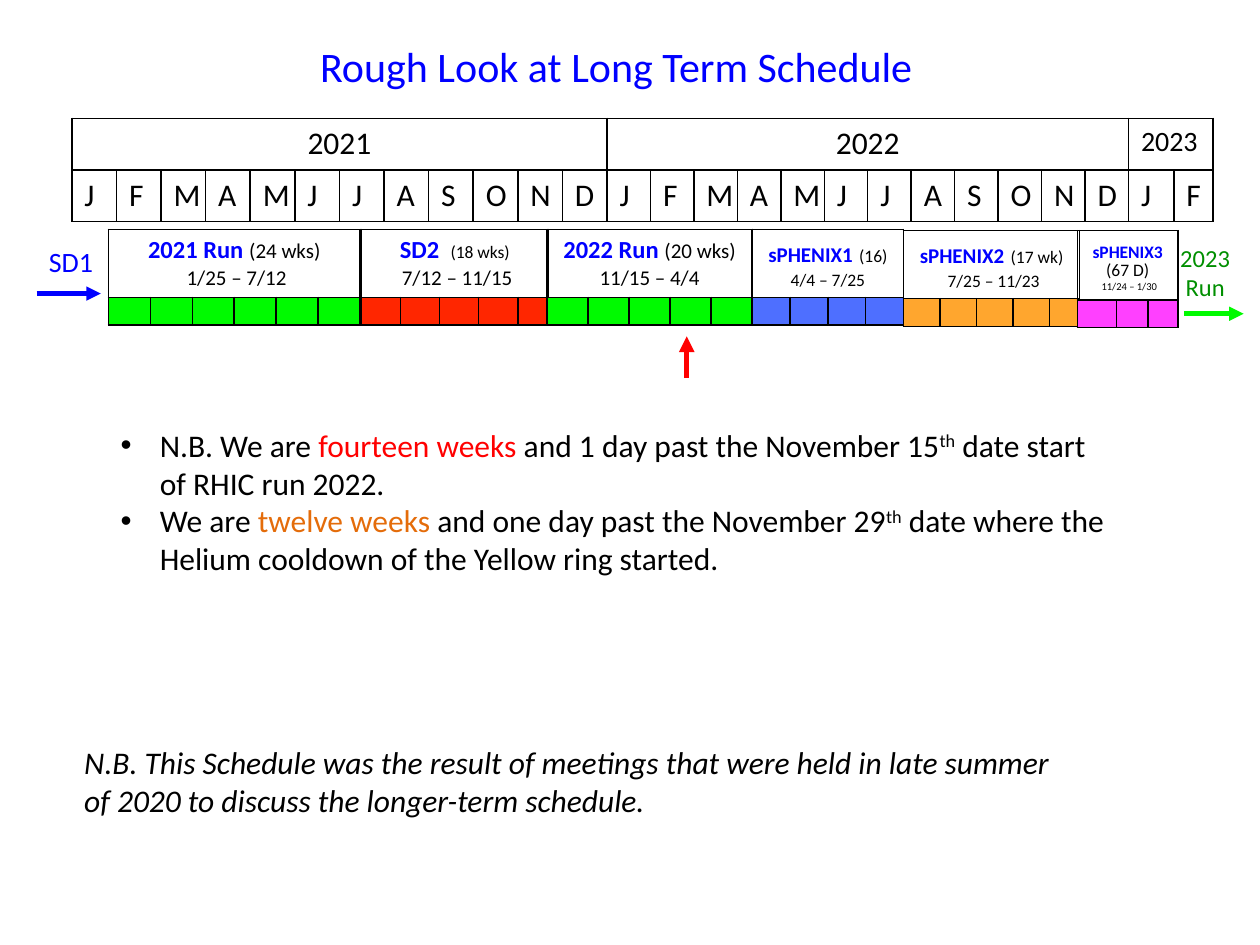
from dataclasses import dataclass

from lxml import etree
from pptx import Presentation
from pptx.dml.color import RGBColor
from pptx.enum.shapes import MSO_CONNECTOR
from pptx.enum.text import MSO_ANCHOR, MSO_AUTO_SIZE, PP_ALIGN
from pptx.oxml.ns import qn
from pptx.util import Inches, Pt

STRAIGHT = MSO_CONNECTOR.STRAIGHT
TOP = MSO_ANCHOR.TOP
NO_AUTOFIT = MSO_AUTO_SIZE.NONE
LEFT, CENTER = PP_ALIGN.LEFT, PP_ALIGN.CENTER
TITLE_ONLY = 5


@dataclass(frozen=True)
class Theme:
    font: str = "Calibri"
    black: str = "000000"
    blue: str = "0000FF"
    red: str = "FF0000"
    orange: str = "E46C0A"
    dark_green: str = "008F00"
    run_green: str = "00FA00"
    shutdown_red: str = "FF2600"
    phase1_blue: str = "0432FF"
    phase2_orange: str = "FF9300"
    phase3_pink: str = "FF40FF"
    title: int = 24
    body: int = 18
    label: int = 16
    heading: int = 14
    dates: int = 12
    small: int = 10
    mini: int = 8
    tiny: int = 6


T = Theme()


@dataclass(frozen=True)
class Span:
    text: str
    size: int = T.body
    color: str = T.black
    bold: bool = False
    italic: bool = False
    raised: bool = False


@dataclass(frozen=True)
class Period:
    left: float
    top: float
    columns: list[float]
    color: str
    lines: list[list[Span]]
    opacity: int = 100
    spacing: float = 1.0


@dataclass(frozen=True)
class Arrow:
    start: tuple[float, float]
    end: tuple[float, float]
    color: str
    weight: float = 2.75


def heading(text: str, size: int) -> Span:
    return Span(text, size, T.blue, bold=True)


def write(frame, lines: list[list[Span]], align=LEFT, spacing: float = 1.0) -> None:
    for index, spans in enumerate(lines):
        paragraph = frame.paragraphs[0] if index == 0 else frame.add_paragraph()
        paragraph.alignment = align
        paragraph.line_spacing = spacing
        for span in spans:
            run = paragraph.add_run()
            run.text = span.text
            run.font.name = T.font
            run.font.size = Pt(span.size)
            run.font.bold = span.bold
            run.font.italic = span.italic
            run.font.color.rgb = RGBColor.from_string(span.color)
            if span.raised:
                run.font._element.set("baseline", "30000")


def add_text(slide, box: tuple[float, ...], lines: list[list[Span]], align=LEFT, wrap: bool = True):
    frame = slide.shapes.add_textbox(*map(Inches, box)).text_frame
    frame.word_wrap = wrap
    write(frame, lines, align)
    return frame


def add_bullets(frame) -> None:
    for paragraph in frame.paragraphs:
        properties = paragraph._p.get_or_add_pPr()
        properties.set("marL", str(Inches(0.31)))
        properties.set("indent", str(-Inches(0.31)))
        etree.SubElement(properties, qn("a:buFont"), typeface="Arial")
        etree.SubElement(properties, qn("a:buChar"), char="•")


def outline(cell) -> None:
    properties = cell._tc.get_or_add_tcPr()
    for position, side in enumerate(("a:lnL", "a:lnR", "a:lnT", "a:lnB")):
        border = etree.Element(qn(side), w=str(Pt(1)))
        fill = etree.SubElement(border, qn("a:solidFill"))
        etree.SubElement(fill, qn("a:srgbClr"), val=T.black)
        properties.insert(position, border)


def add_grid(slide, left: float, top: float, columns: list[float], rows: list[float]):
    """Add an unfilled table with thin black borders."""
    table = slide.shapes.add_table(
        len(rows), len(columns), *map(Inches, (left, top, sum(columns), sum(rows)))).table
    table.first_row = table.horz_banding = False
    for column, width in zip(table.columns, columns):
        column.width = Inches(width)
    for row, height in zip(table.rows, rows):
        row.height = Inches(height)
    for cell in table.iter_cells():
        cell.fill.background()
        outline(cell)
    return table


def add_calendar(slide) -> None:
    columns = [4.25 / 12] * 12 + [4.14 / 12] * 12 + [0.36, 0.31]
    table = add_grid(slide, 0.57, 0.94, columns, [0.41, 0.41])
    years = [("2021", 0, 11, T.body, CENTER), ("2022", 12, 23, T.body, CENTER),
             ("2023", 24, 25, T.label, LEFT)]
    for year, first, last, size, align in years:
        table.cell(0, first).merge(table.cell(0, last))
        write(table.cell(0, first).text_frame, [[Span(year, size)]], align)
    for index, month in enumerate("JFMAMJJASOND" * 2 + "JF"):
        write(table.cell(1, index).text_frame, [[Span(month)]])


def add_period(slide, period: Period) -> None:
    """Draw a labelled period above its bar of coloured month cells."""
    table = add_grid(slide, period.left, period.top, period.columns, [0.54, 0.22])
    last = len(period.columns) - 1
    table.cell(0, 0).merge(table.cell(0, last))
    write(table.cell(0, 0).text_frame, period.lines, CENTER, period.spacing)
    for index in range(last + 1):
        cell = table.cell(1, index)
        cell.margin_top = cell.margin_bottom = 0
        cell.fill.solid()
        cell.fill.fore_color.rgb = RGBColor.from_string(period.color)
        if period.opacity < 100:
            color = cell._tc.tcPr.find(qn("a:solidFill"))[0]
            etree.SubElement(color, qn("a:alpha"), val=str(period.opacity * 1000))
        # The size of the empty line keeps the bar thin
        etree.SubElement(cell.text_frame.paragraphs[0]._p, qn("a:endParaRPr"), sz=str(T.tiny * 100))


def add_arrow(slide, arrow: Arrow) -> None:
    connector = slide.shapes.add_connector(STRAIGHT, *map(Inches, arrow.start + arrow.end))
    connector.line.color.rgb = RGBColor.from_string(arrow.color)
    connector.line.width = Pt(arrow.weight)
    etree.SubElement(connector.line._get_or_add_ln(), qn("a:tailEnd"), type="triangle")
    etree.SubElement(connector._element.spPr, qn("a:effectLst"))


def add_title(slide, text: str) -> None:
    title = slide.shapes.title
    title.left, title.top, title.width, title.height = map(Inches, (2.44, 0.27, 5.13, 0.5))
    title.text_frame.auto_size = NO_AUTOFIT
    title.text_frame.vertical_anchor = TOP
    write(title.text_frame, [[Span(text, T.title, T.blue)]])


PERIODS = [
    Period(0.86, 1.82, [2 / 6] * 6, T.run_green,
           [[heading("2021 Run ", T.heading), Span("(24 wks)", T.dates)], [Span(" 1/25 – 7/12", T.dates)]]),
    Period(2.87, 1.82, [0.31] * 4 + [0.23], T.shutdown_red,
           [[heading("SD2  ", T.heading), Span("(18 wks)", T.small)], [Span(" 7/12 – 11/15", T.dates)]]),
    Period(4.34, 1.82, [1.63 / 5] * 5, T.run_green,
           [[heading("2022 Run ", T.heading), Span("(20 wks) 11/15 – 4/4", T.dates)]]),
    Period(5.97, 1.82, [0.3] * 4, T.phase1_blue,
           [[heading("sPHENIX1", T.dates), heading(" ", T.label), Span("(16) 4/4 – 7/25", T.small)]], 70),
    Period(7.17, 1.83, [0.29] * 4 + [0.23], T.phase2_orange,
           [[heading("sPHENIX2", T.dates), heading(" ", T.label), Span("(17 wk)", T.small)],
            [Span(" 7/25 – 11/23", T.small)]], 82),
    Period(8.55, 1.83, [0.31, 0.25, 0.23], T.phase3_pink,
           [[heading("sPHENIX3", T.small), heading(" ", T.label), Span("(67 D)", T.small)],
            [Span(" ", T.mini), Span("11/24 – 1/30", T.tiny)]], spacing=0.78),
]

ARROWS = [
    Arrow((0.29, 2.33), (0.8, 2.33), T.blue),
    Arrow((9.4, 2.49), (9.87, 2.49), T.run_green),
    Arrow((5.45, 3), (5.45, 2.67), T.red, 3),
]

STATUS = [
    [Span("N.B. We are "), Span("fourteen weeks ", color=T.red),
     Span("and 1 day past the November 15"), Span("th", raised=True),
     Span(" date start of RHIC run 2022.")],
    [Span("We are "), Span("twelve weeks ", color=T.orange),
     Span("and one day past the November 29"), Span("th", raised=True),
     Span(" date where the Helium cooldown of the Yellow ring started.")],
]

ORIGIN_NOTE = ("N.B. This Schedule was the result of meetings that were held in late summer "
               "of 2020 to discuss the longer-term schedule.")


def main() -> None:
    deck = Presentation()
    deck.slide_width, deck.slide_height = Inches(10), Inches(7.5)
    slide = deck.slides.add_slide(deck.slide_layouts[TITLE_ONLY])
    add_title(slide, "Rough Look at Long Term Schedule")
    add_calendar(slide)
    for period in PERIODS:
        add_period(slide, period)
    for arrow in ARROWS:
        add_arrow(slide, arrow)
    add_text(slide, (0.29, 1.89, 0.56, 0.37), [[Span("SD1", T.label, T.blue)]], wrap=False)
    add_text(slide, (9.2, 1.88, 0.73, 0.57),
             [[Span(word, T.heading, T.dark_green)] for word in ("2023", "Run")], CENTER)
    add_bullets(add_text(slide, (0.86, 3.33, 8.09, 1.31), STATUS))
    add_text(slide, (0.57, 5.85, 8.12, 0.71), [[Span(ORIGIN_NOTE, italic=True)]])
    deck.save("out.pptx")


if __name__ == "__main__":
    main()
